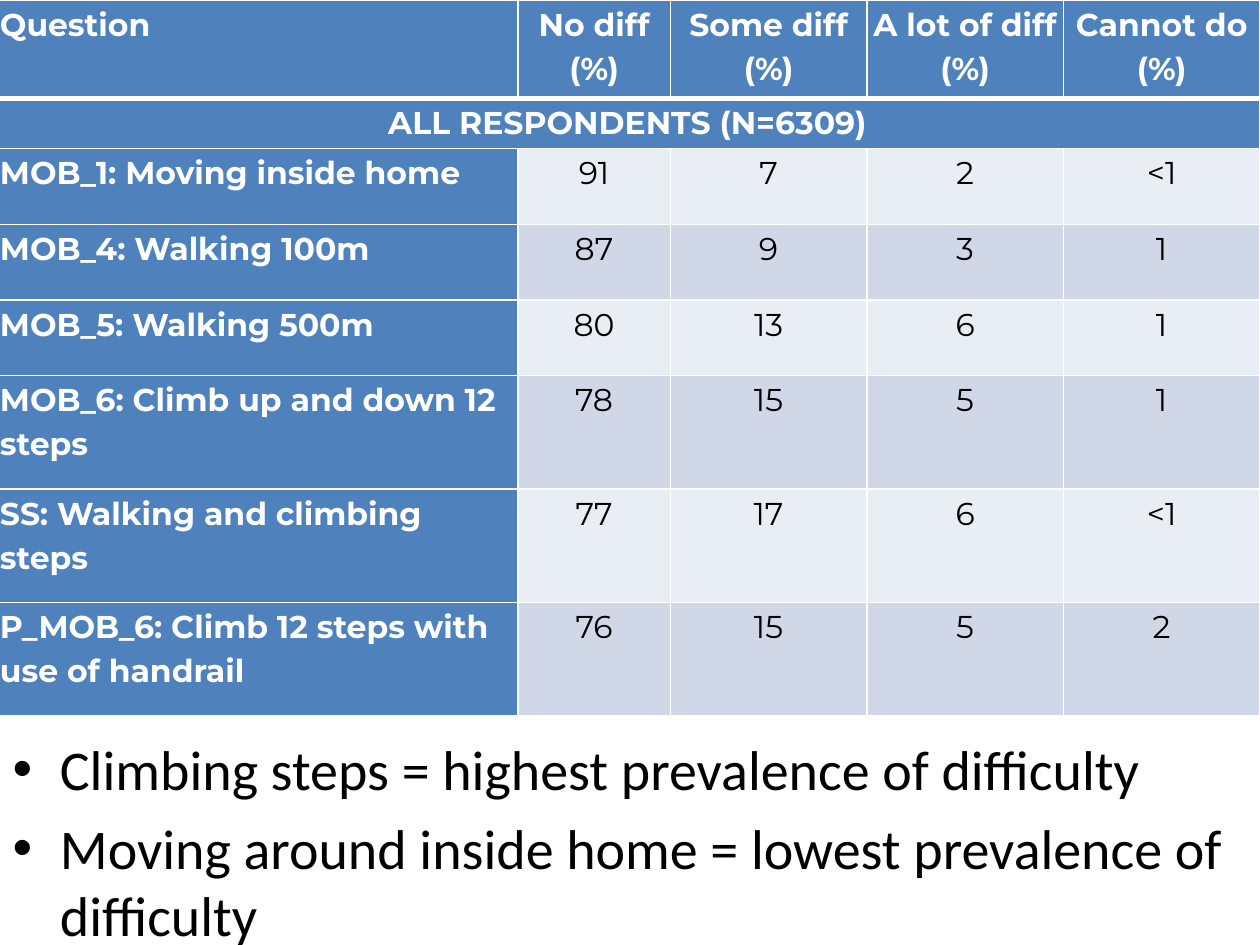
from typing import NamedTuple

from pptx import Presentation
from pptx.dml.color import RGBColor
from pptx.enum.text import MSO_ANCHOR, MSO_AUTO_SIZE, PP_ALIGN
from pptx.oxml.ns import qn
from pptx.util import Inches, Pt
from lxml.etree import SubElement

BLUE = RGBColor(0x4F, 0x81, 0xBD)
PALE = RGBColor(0xE9, 0xED, 0xF4)
TINT = RGBColor(0xD0, 0xD8, 0xE8)
WHITE = RGBColor(0xFF, 0xFF, 0xFF)
BLACK = RGBColor(0, 0, 0)


class Question(NamedTuple):
    label: str
    answers: tuple[str, ...]
    height: float


HEADINGS = ("Question", "No diff (%)", "Some diff (%)", "A lot of diff (%)", "Cannot do (%)")
BANNER = "ALL RESPONDENTS (N=6309)"
QUESTIONS = (
    Question("MOB_1: Moving inside home", ("91", "7", "2", "<1"), 0.6),
    Question("MOB_4: Walking 100m", ("87", "9", "3", "1"), 0.6),
    Question("MOB_5: Walking 500m", ("80", "13", "6", "1"), 0.6),
    Question("MOB_6: Climb up and down 12 steps", ("78", "15", "5", "1"), 0.9),
    Question("SS: Walking and climbing steps", ("77", "17", "6", "<1"), 0.9),
    Question("P_MOB_6: Climb 12 steps with use of handrail", ("76", "15", "5", "2"), 0.9),
)
FINDINGS = (
    "Climbing steps = highest prevalence of difficulty",
    "Moving around inside home = lowest prevalence of difficulty",
)
COLUMN_WIDTHS = (4.15, 1.21, 1.56, 1.56, 1.56)
ROW_HEIGHTS = (0.78, 0.4, *(question.height for question in QUESTIONS))


def write(paragraph, text: str, *, size: float, font: str, color: RGBColor,
          bold: bool = False, align=None, spacing: float | None = None) -> None:
    """Put one formatted run into a paragraph."""
    paragraph.alignment = align
    paragraph.line_spacing = spacing
    run = paragraph.add_run()
    run.text = text
    run.font.size = Pt(size)
    run.font.name = font
    run.font.bold = bold
    run.font.color.rgb = color


def set_borders(cell, top: float = 1, bottom: float = 1) -> None:
    """Draw white cell borders, with widths in points."""
    properties = cell._tc.get_or_add_tcPr()
    for side, width in (("L", 1), ("R", 1), ("T", top), ("B", bottom)):
        line = SubElement(properties, qn(f"a:ln{side}"), w=str(Pt(width)))
        fill = SubElement(line, qn("a:solidFill"))
        SubElement(fill, qn("a:srgbClr"), val=str(WHITE))


def fill_cell(cell, text: str, fill: RGBColor, *, centered: bool = True,
              top: float = 1, bottom: float = 1) -> None:
    """Format a table cell; blue cells carry bold white text."""
    set_borders(cell, top, bottom)
    cell.fill.solid()
    cell.fill.fore_color.rgb = fill
    cell.margin_left = cell.margin_right = Inches(0.04)
    cell.margin_top = cell.margin_bottom = 0
    on_blue = fill == BLUE
    write(cell.text_frame.paragraphs[0], text, size=18, font="Montserrat",
          color=WHITE if on_blue else BLACK, bold=on_blue,
          align=PP_ALIGN.CENTER if centered else PP_ALIGN.LEFT, spacing=1.15)


def add_results(slide) -> None:
    frame = slide.shapes.add_table(
        len(ROW_HEIGHTS), len(COLUMN_WIDTHS), Inches(-0.04), 0,
        Inches(sum(COLUMN_WIDTHS)), Inches(sum(ROW_HEIGHTS)))
    results = frame.table
    for column, width in zip(results.columns, COLUMN_WIDTHS):
        column.width = Inches(width)
    for row, height in zip(results.rows, ROW_HEIGHTS):
        row.height = Inches(height)

    # Headings and the banner across all columns
    for index, heading in enumerate(HEADINGS):
        fill_cell(results.cell(0, index), heading, BLUE, centered=index > 0, bottom=3)
    banner = results.cell(1, 0)
    banner.merge(results.cell(1, len(HEADINGS) - 1))
    fill_cell(banner, BANNER, BLUE, top=3)

    # One banded row for each question
    for index, question in enumerate(QUESTIONS):
        row = index + 2
        fill_cell(results.cell(row, 0), question.label, BLUE, centered=False)
        for column, answer in enumerate(question.answers, start=1):
            fill_cell(results.cell(row, column), answer, TINT if index % 2 else PALE)


def add_findings(slide) -> None:
    """Fill the body placeholder, whose layout supplies bullets and spacing."""
    body = slide.placeholders[1]
    body.left, body.top = 0, Inches(5.78)
    body.width, body.height = Inches(10), Inches(1.72)
    frame = body.text_frame
    frame.auto_size = MSO_AUTO_SIZE.NONE
    frame.vertical_anchor = MSO_ANCHOR.TOP
    for index, finding in enumerate(FINDINGS):
        paragraph = frame.add_paragraph() if index else frame.paragraphs[0]
        write(paragraph, finding, size=32, font="Calibri", color=BLACK)


def main() -> None:
    deck = Presentation()
    deck.slide_width, deck.slide_height = Inches(10), Inches(7.5)
    slide = deck.slides.add_slide(deck.slide_layouts[1])
    # The slide has no title
    title = slide.shapes.title.element
    title.getparent().remove(title)
    add_results(slide)
    add_findings(slide)
    deck.save("out.pptx")


if __name__ == "__main__":
    main()
